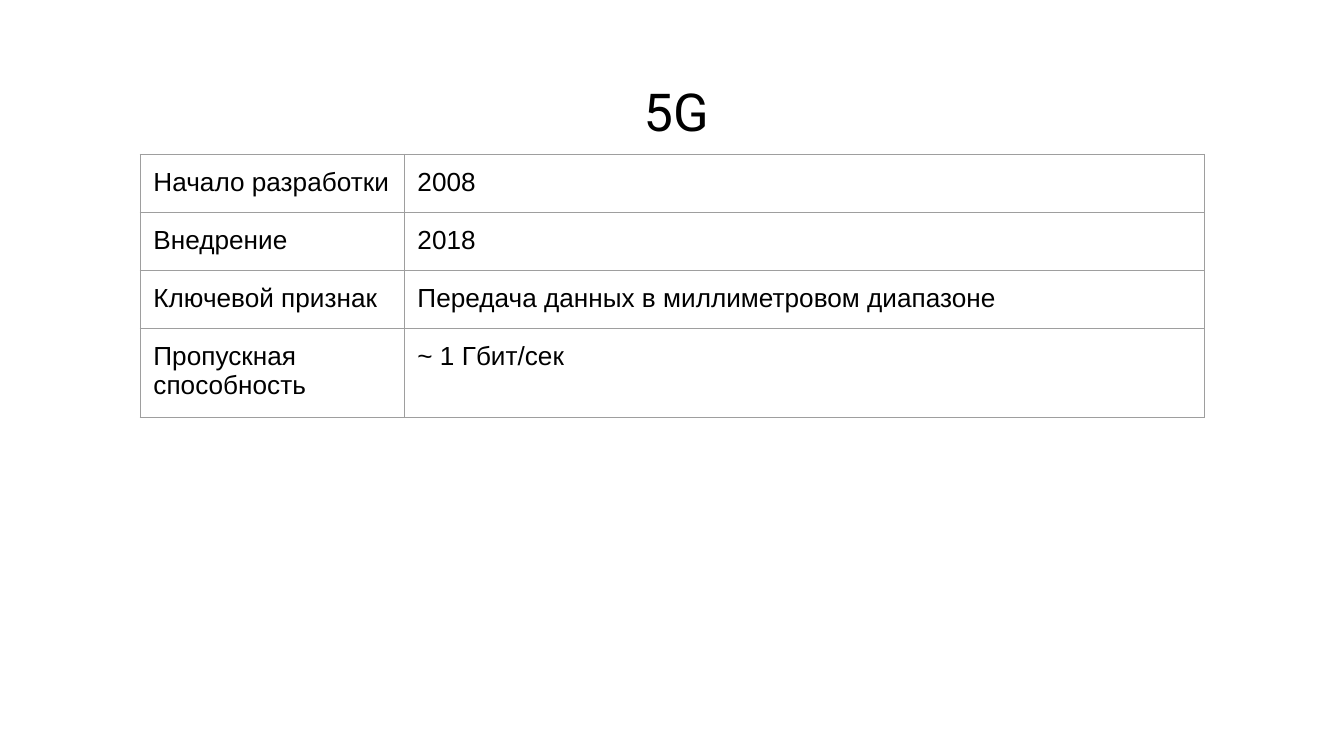
from typing import NamedTuple

from lxml import etree
from pptx import Presentation
from pptx.dml.color import RGBColor
from pptx.enum.text import MSO_ANCHOR, PP_ALIGN
from pptx.oxml.ns import qn
from pptx.util import Cm, Pt

CENTER, LEFT = PP_ALIGN.CENTER, PP_ALIGN.LEFT
TOP = MSO_ANCHOR.TOP
COLORS = {"text": "000000", "border": "9E9E9E", "background": "FFFFFF"}
INSET = Cm(0.25)
ROW_HEIGHT = Cm(1.06)
COLUMN_WIDTHS = (Cm(4.99), Cm(15.12))
BORDER_WIDTH = Pt(0.75)


class Feature(NamedTuple):
    name: str
    value: str


FEATURES = [
    Feature("Начало разработки", "2008"),
    Feature("Внедрение", "2018"),
    Feature("Ключевой признак", "Передача данных в миллиметровом диапазоне"),
    Feature("Пропускная способность", "~ 1 Гбит/сек"),
]


def write(frame, text: str, font: str, size: int, align=LEFT) -> None:
    """Set insets, anchor and a single formatted run on a text frame or cell."""
    frame.margin_left = frame.margin_right = INSET
    frame.margin_top = frame.margin_bottom = INSET
    frame.vertical_anchor = TOP
    tf = getattr(frame, "text_frame", frame)
    tf.word_wrap = True
    p = tf.paragraphs[0]
    p.alignment = align
    r = p.add_run()
    r.text = text
    r.font.name = font
    r.font.size = Pt(size)
    r.font.color.rgb = RGBColor.from_string(COLORS["text"])


def add_borders(cell) -> None:
    """Outline a cell; borders must precede the fill in tcPr."""
    tc_pr = cell._tc.get_or_add_tcPr()
    for i, side in enumerate(("lnL", "lnR", "lnT", "lnB")):
        ln = etree.Element(qn(f"a:{side}"), w=str(BORDER_WIDTH))
        fill = etree.SubElement(ln, qn("a:solidFill"))
        etree.SubElement(fill, qn("a:srgbClr"), val=COLORS["border"])
        tc_pr.insert(i, ln)


def add_title(s, text: str) -> None:
    sp = s.shapes.add_textbox(Cm(1.02), Cm(1.25), Cm(23.52), Cm(1.6))
    write(sp.text_frame, text, "Roboto", 28, CENTER)


def add_feature_table(s, features: list[Feature]) -> None:
    table = s.shapes.add_table(
        len(features), len(COLUMN_WIDTHS), Cm(2.65), Cm(2.92),
        sum(COLUMN_WIDTHS), ROW_HEIGHT * len(features),
    ).table
    table.first_row = table.horz_banding = False
    for column, width in zip(table.columns, COLUMN_WIDTHS):
        column.width = width
    for i, feature in enumerate(features):
        table.rows[i].height = ROW_HEIGHT
        for j, text in enumerate(feature):
            cell = table.cell(i, j)
            cell.fill.background()
            add_borders(cell)
            write(cell, text, "Arial", 14)


def main() -> None:
    prs = Presentation()
    prs.slide_width, prs.slide_height = Cm(25.4), Cm(14.29)
    s = prs.slides.add_slide(prs.slide_layouts[6])
    s.background.fill.solid()
    s.background.fill.fore_color.rgb = RGBColor.from_string(COLORS["background"])
    add_title(s, "5G")
    add_feature_table(s, FEATURES)
    prs.save("out.pptx")


if __name__ == "__main__":
    main()
